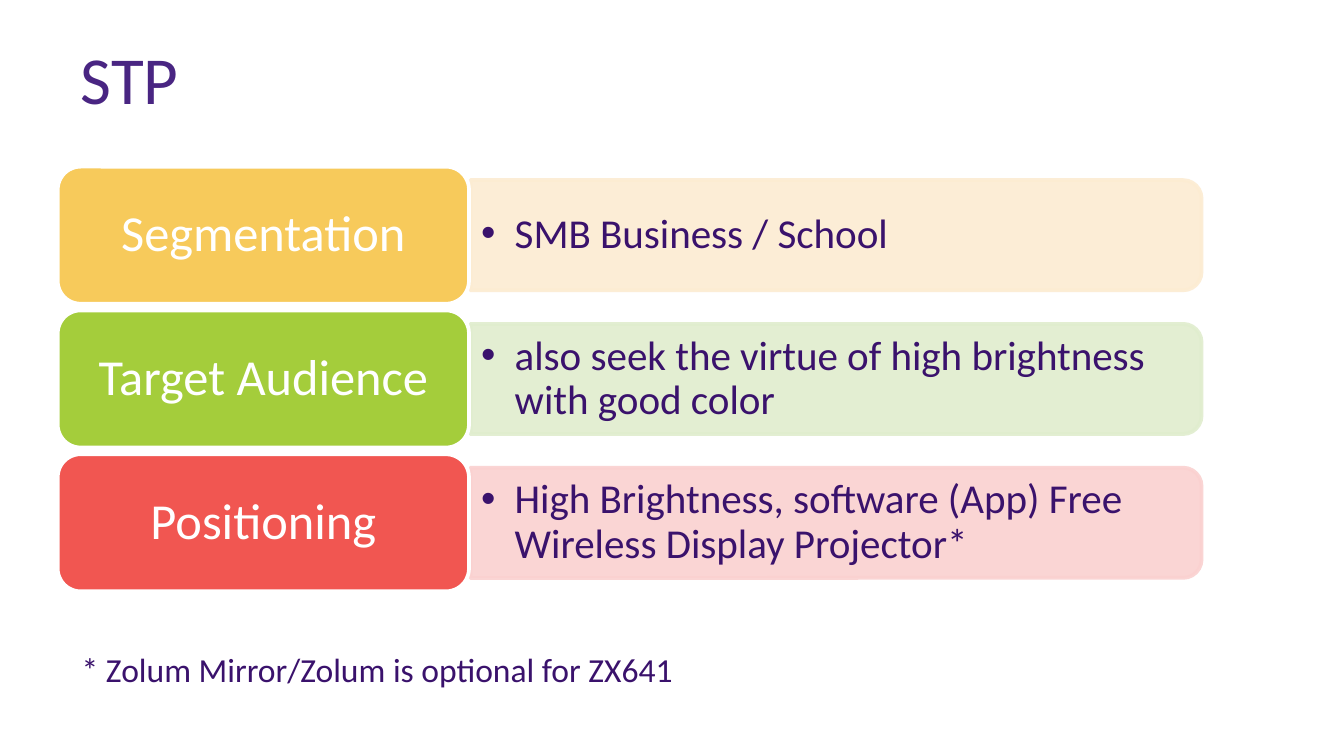
from lxml.etree import SubElement
from pptx import Presentation
from pptx.dml.color import RGBColor
from pptx.enum.shapes import MSO_SHAPE as Shape
from pptx.enum.text import MSO_ANCHOR as Anchor, MSO_AUTO_SIZE as AutoSize, PP_ALIGN as Align
from pptx.oxml.ns import qn
from pptx.util import Inches, Pt

COLORS = {
    "title": "492582", "text": "3A126C", "white": "FFFFFF",
    "yellow": "F7CA5B", "cream": "FCECD2",
    "green": "A4CD3B", "mint": "E0EDCE",
    "red": "F15651", "pink": "FAD1D0",
}
ROWS = [
    ("Segmentation", "SMB Business / School", "yellow", "cream"),
    ("Target Audience", "also seek the virtue of high brightness with good color", "green", "mint"),
    ("Positioning", "High Brightness, software (App) Free Wireless Display Projector*", "red", "pink"),
]
TOP, PITCH = 1.24, 1.07
LABEL_LEFT, LABEL_WIDTH, LABEL_HEIGHT = 0.43, 3.06, 1.02
PANEL_LEFT, PANEL_LENGTH, PANEL_HEIGHT = 3.5, 5.44, 0.82
DETAIL_HEIGHT = 0.74


def write(box, text, size, color, **frame_format):
    frame = box.text_frame
    for attribute, value in frame_format.items():
        setattr(frame, attribute, value)
    paragraph = frame.paragraphs[0]
    run = paragraph.add_run()
    run.text = text
    run.font.name = "Calibri"
    run.font.size = Pt(size)
    run.font.color.rgb = RGBColor.from_string(COLORS[color])
    return paragraph


def paint(block, fill, line):
    block.shadow.inherit = False
    block.fill.solid()
    block.fill.fore_color.rgb = RGBColor.from_string(COLORS[fill])
    block.line.color.rgb = RGBColor.from_string(COLORS[line])
    block.line.width = Pt(2)


prs = Presentation()
prs.slide_width, prs.slide_height = Inches(10), Inches(10 * 9 / 16)
slide = prs.slides.add_slide(prs.slide_layouts[5])

heading = slide.shapes.title
heading.left, heading.top = Inches(0.5), Inches(0.23)
heading.width, heading.height = Inches(8.12), Inches(0.99)
write(heading, "STP", 36, "title", vertical_anchor=Anchor.TOP,
      auto_size=AutoSize.NONE).alignment = Align.LEFT

for row, (name, description, strong, pale) in enumerate(ROWS):
    top = TOP + row * PITCH
    middle = top + LABEL_HEIGHT / 2

    panel = slide.shapes.add_shape(
        Shape.ROUND_2_SAME_RECTANGLE,
        Inches(PANEL_LEFT + (PANEL_LENGTH - PANEL_HEIGHT) / 2), Inches(middle - PANEL_LENGTH / 2),
        Inches(PANEL_HEIGHT), Inches(PANEL_LENGTH))
    panel.rotation = 90
    paint(panel, pale, pale)
    for color in panel._element.spPr.iter(qn("a:srgbClr")):
        SubElement(color, qn("a:alpha"), val="90000")

    detail = slide.shapes.add_textbox(
        Inches(3.49), Inches(middle - DETAIL_HEIGHT / 2), Inches(5.4), Inches(DETAIL_HEIGHT))
    bullet = write(detail, description, 22, "text", word_wrap=True, vertical_anchor=Anchor.MIDDLE,
                   margin_left=Inches(0.09), margin_right=Inches(0.09))
    properties = bullet._p.get_or_add_pPr()
    properties.set("marL", str(Inches(0.25)))
    properties.set("indent", str(Inches(-0.25)))
    SubElement(properties, qn("a:buFont"), typeface="Arial")
    SubElement(properties, qn("a:buChar"), char="•")
    bullet.level = 1
    bullet.line_spacing = 0.9

    label = slide.shapes.add_shape(
        Shape.ROUNDED_RECTANGLE, Inches(LABEL_LEFT), Inches(top),
        Inches(LABEL_WIDTH), Inches(LABEL_HEIGHT))
    paint(label, strong, "white")
    caption = write(label, name, 27, "white", word_wrap=True, vertical_anchor=Anchor.MIDDLE)
    caption.alignment = Align.CENTER
    caption.line_spacing = 0.9

footnote = slide.shapes.add_textbox(Inches(0.51), Inches(4.78), Inches(4.87), Inches(0.4))
write(footnote, "* Zolum Mirror/Zolum is optional for ZX641", 18, "text",
      word_wrap=False, auto_size=AutoSize.SHAPE_TO_FIT_TEXT)

prs.save("out.pptx")
